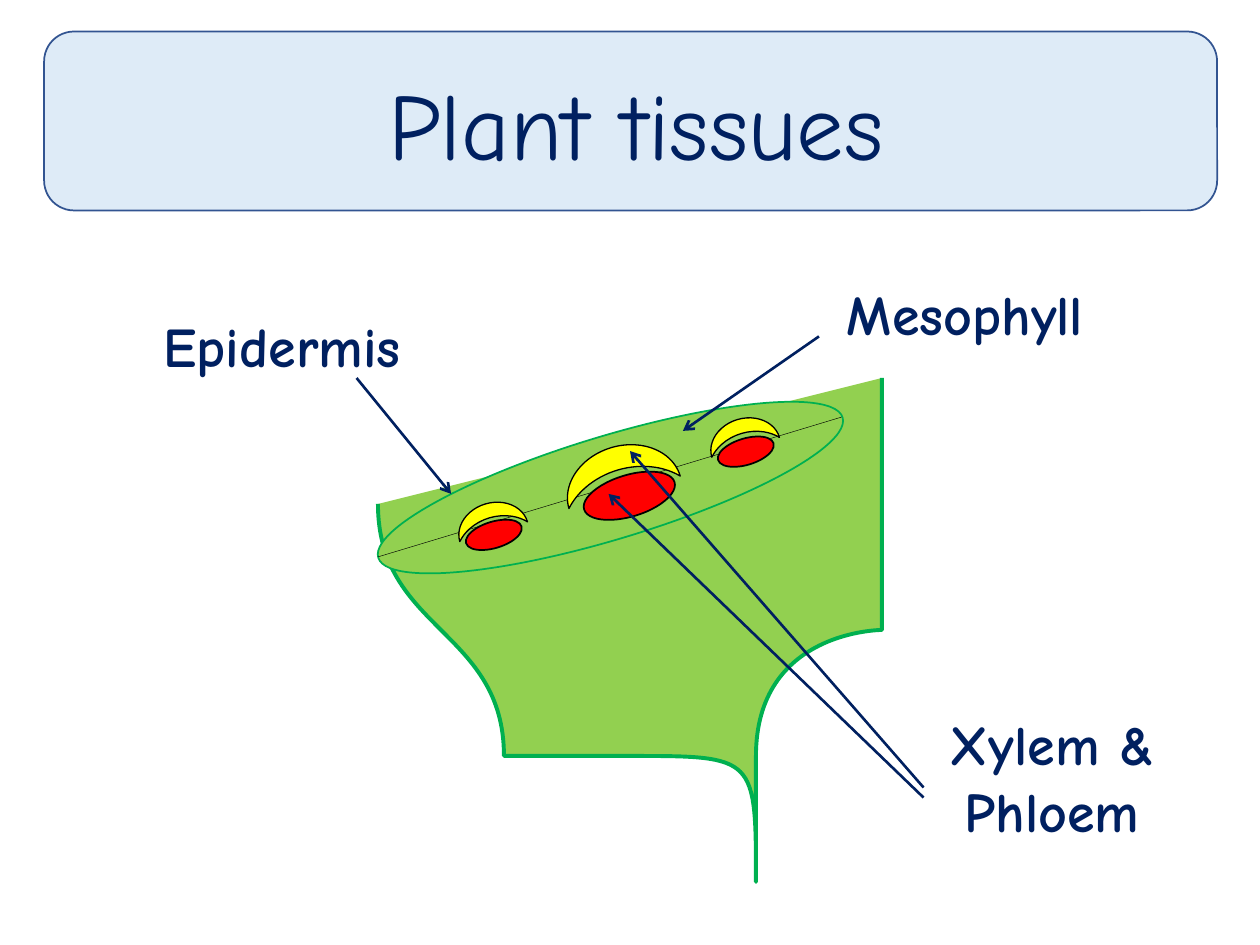
"""Build a slide that labels the tissues in a cut leaf."""
from dataclasses import dataclass

import lxml.etree
import pptx
import pptx.dml.color
import pptx.enum.shapes
import pptx.enum.text
import pptx.oxml.ns
import pptx.util

Inches = pptx.util.Inches
RGBColor = pptx.dml.color.RGBColor
Shape = pptx.enum.shapes.MSO_SHAPE
Anchor = pptx.enum.text.MSO_ANCHOR
qn = pptx.oxml.ns.qn

NAVY = RGBColor(0x00, 0x20, 0x60)
LEAF = RGBColor(0x92, 0xD0, 0x50)
LEAF_EDGE = RGBColor(0x00, 0xB0, 0x50)
BANNER = RGBColor(0xDE, 0xEB, 0xF7)
BANNER_EDGE = RGBColor(0x32, 0x54, 0x91)
YELLOW = RGBColor(0xFF, 0xFF, 0x00)
RED = RGBColor(0xFF, 0x00, 0x00)
BLACK = RGBColor(0x00, 0x00, 0x00)

FONT = "Comic Neue"
TILT = -16.8
MOON_TILT = 73.7

Point = tuple[float, float]
Box = tuple[float, float, float, float]


@dataclass
class Label:
    text: str
    box: Box
    size: int = 32
    bold: bool = True
    anchor: Anchor = Anchor.TOP


@dataclass
class Bundle:
    moon: Box
    oval: Box


@dataclass
class Line:
    start: Point
    end: Point
    color: RGBColor = NAVY
    width: float = 1.5
    arrow: bool = True


LEAF_START = (3, 4.45)
LEAF_CURVES = [
    (3.33, 4.92), (3.67, 5.39), (4.08, 5.63),
    (4.5, 5.86), (5.2, 5.72), (5.49, 5.87),
    (5.79, 6.01), (5.72, 6.41), (5.87, 6.51),
    (6.01, 6.6), (6.32, 6.58), (6.37, 6.43),
    (6.43, 6.29), (6.11, 5.85), (6.2, 5.61),
    (6.3, 5.38), (6.85, 5.41), (6.93, 5.04),
    (7.01, 4.66), (6.85, 4.01), (6.69, 3.36),
]
MIDRIB = Line((3, 4.42), (6.68, 3.31), BLACK, 0.25, False)
LABELS = [
    Label("Epidermis", (1, 2.42, 2.48, 0.64)),
    Label("Mesophyll", (6.42, 2.17, 2.48, 0.64)),
    Label("Xylem & Phloem", (6.92, 5.58, 2.86, 1.18)),
    Label("Plant tissues", (0.35, 0.17, 9.39, 1.61), 54, False, Anchor.MIDDLE),
]
BUNDLES = [
    Bundle((4.72, 3.27, 0.37, 0.92), (4.62, 3.77, 0.75, 0.33)),
    Bundle((5.77, 3.16, 0.23, 0.56), (5.69, 3.48, 0.46, 0.21)),
    Bundle((3.77, 3.83, 0.23, 0.56), (3.69, 4.14, 0.46, 0.21)),
]
POINTERS = [
    Line((7.33, 6.33), (4.83, 3.92)),
    Line((7.33, 6.25), (5, 3.58)),
    Line((6.5, 2.67), (5.42, 3.42)),
    Line((2.83, 3), (3.58, 3.92)),
]


def style(sp, fill: RGBColor, edge: RGBColor, width: float) -> None:
    sp.shadow.inherit = False
    sp.fill.solid()
    sp.fill.fore_color.rgb = fill
    sp.line.color.rgb = edge
    sp.line.width = pptx.util.Pt(width)


def add_shape(slide, kind: Shape, box: Box, fill: RGBColor, edge: RGBColor,
              width: float = 1, rotation: float = 0) -> None:
    sp = slide.shapes.add_shape(kind, *map(Inches, box))
    sp.rotation = rotation
    style(sp, fill, edge, width)


def add_leaf(slide) -> None:
    builder = slide.shapes.build_freeform(*LEAF_START, scale=Inches(1))
    builder.add_line_segments(LEAF_CURVES, close=False)
    sp = builder.convert_to_shape()
    segments = list(sp._element.iter(qn("a:lnTo")))
    for i in range(0, len(segments), 3):
        curve = lxml.etree.SubElement(segments[i].getparent(), qn("a:cubicBezTo"))
        for segment in segments[i:i + 3]:
            curve.append(segment[0])
            segment.getparent().remove(segment)
    style(sp, LEAF, LEAF_EDGE, 2.25)


def add_line(slide, line: Line) -> None:
    c = slide.shapes.add_connector(
        pptx.enum.shapes.MSO_CONNECTOR.STRAIGHT,
        *map(Inches, line.start + line.end))
    c.line.color.rgb = line.color
    c.line.width = pptx.util.Pt(line.width)
    if line.arrow:
        lxml.etree.SubElement(c.line._get_or_add_ln(), qn("a:tailEnd"), type="arrow")
    lxml.etree.SubElement(c._element.spPr, qn("a:effectLst"))


def add_label(slide, label: Label) -> None:
    tf = slide.shapes.add_textbox(*map(Inches, label.box)).text_frame
    tf.word_wrap = True
    tf.vertical_anchor = label.anchor
    p = tf.paragraphs[0]
    p.text = label.text
    p.alignment = pptx.enum.text.PP_ALIGN.CENTER
    p.font.name = FONT
    p.font.size = pptx.util.Pt(label.size)
    p.font.bold = label.bold
    p.font.color.rgb = NAVY


def add_bundle(slide, bundle: Bundle) -> None:
    add_shape(slide, Shape.MOON, bundle.moon, YELLOW, BLACK, 0.75, MOON_TILT)
    add_shape(slide, Shape.OVAL, bundle.oval, RED, BLACK, rotation=TILT)


def main() -> None:
    prs = pptx.Presentation()
    prs.slide_width = Inches(10)
    prs.slide_height = Inches(7.5)
    slide = prs.slides.add_slide(prs.slide_layouts[6])
    add_leaf(slide)
    add_shape(slide, Shape.OVAL, (2.92, 3.46, 3.85, 0.82), LEAF, LEAF_EDGE,
              rotation=TILT)
    add_line(slide, MIDRIB)
    add_shape(slide, Shape.ROUNDED_RECTANGLE, (0.35, 0.25, 9.31, 1.42),
              BANNER, BANNER_EDGE)
    for label in LABELS:
        add_label(slide, label)
    for bundle in BUNDLES:
        add_bundle(slide, bundle)
    for pointer in POINTERS:
        add_line(slide, pointer)
    prs.save("out.pptx")


if __name__ == "__main__":
    main()
